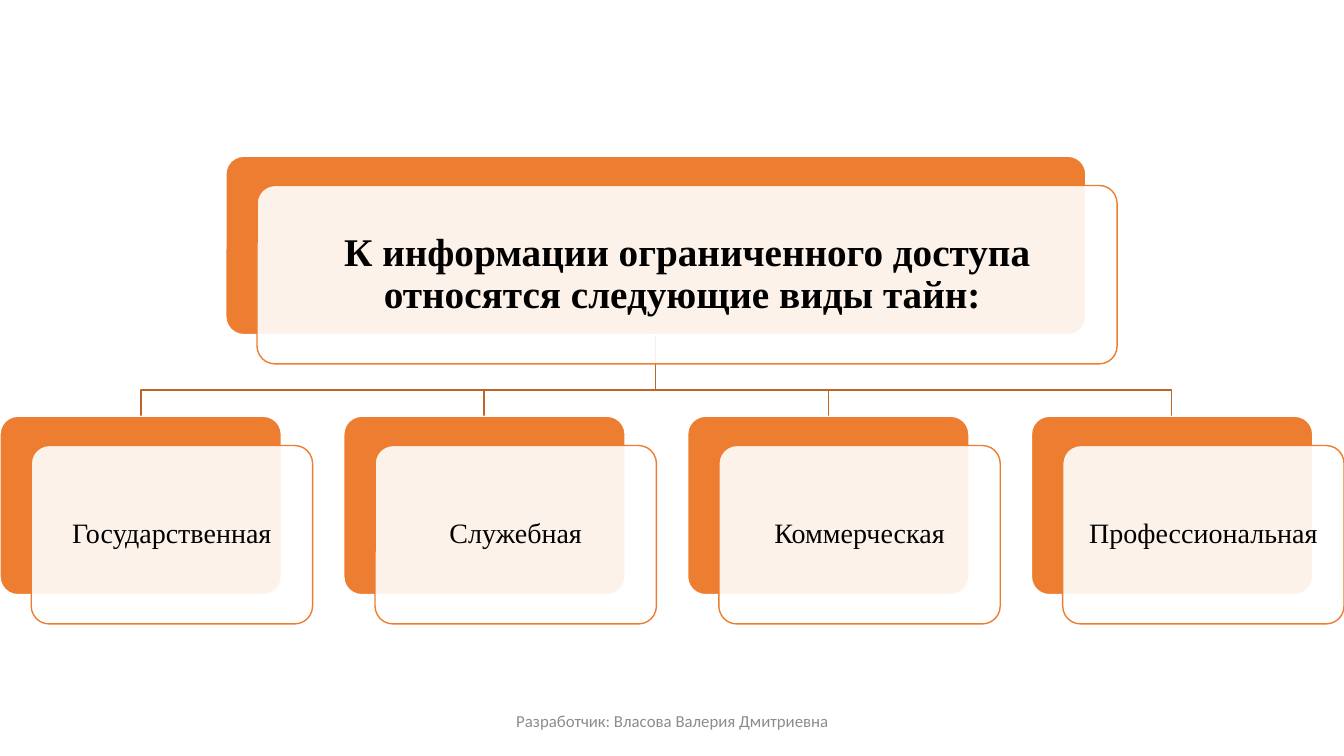
from dataclasses import dataclass

from lxml import etree
from pptx import Presentation
from pptx.dml.color import RGBColor
from pptx.enum.shapes import MSO_SHAPE
from pptx.enum.text import MSO_ANCHOR, PP_ALIGN
from pptx.oxml.ns import qn
from pptx.util import Emu, Pt

PX = 9144
ORANGE, BROWN, WHITE, BLACK, GRAY = "ED7D31", "BE6427", "FFFFFF", "000000", "8C8C8C"
OFFSET_X, OFFSET_Y = 31, 29
CARD_H, CARD_TOP, CARD_STEP = 177, 413, 341
BRANCH_Y = 387


@dataclass
class Card:
    """A labelled card, given by the corner and width of its back plate."""

    text: str
    x: int
    y: int
    w: int
    size: int = 20
    bold: bool = False
    inset: int = 8

    @property
    def mid(self) -> float:
        return self.x + self.w / 2


TITLE = Card("К информации ограниченного доступа относятся следующие виды тайн: ",
             224, 155, 853, size=28, bold=True, inset=12)
SECRETS = ["Государственная", "Служебная", "Коммерческая", "Профессиональная"]
CARDS = [Card(text, i * CARD_STEP, CARD_TOP, 279) for i, text in enumerate(SECRETS)]


def px(n: float) -> Emu:
    """Turn px into EMU."""
    return Emu(round(n * PX))


def rgb(color: str) -> RGBColor:
    """Turn a hex string into a colour."""
    return RGBColor.from_string(color)


def set_line(sp, color: str) -> None:
    """Give a shape a 1 pt outline and no shadow."""
    sp.line.color.rgb = rgb(color)
    sp.line.width = Pt(1)
    sp.shadow.inherit = False


def write(sp, text: str, *, size: int, font: str, color: str, bold: bool = False,
          inset: int = 10, spacing: float = 1.0) -> None:
    """Write one centred paragraph into a shape."""
    tf = sp.text_frame
    tf.word_wrap = True
    tf.vertical_anchor = MSO_ANCHOR.MIDDLE
    tf.margin_left = tf.margin_right = tf.margin_top = tf.margin_bottom = px(inset)
    p = tf.paragraphs[0]
    p.alignment = PP_ALIGN.CENTER
    p.line_spacing = spacing
    r = p.add_run()
    r.text = text
    r.font.size = Pt(size)
    r.font.name = font
    r.font.bold = bold
    r.font.color.rgb = rgb(color)


def add_plate(s, x: int, y: int, w: int, *, fill: str, line: str, alpha: int = 100):
    """Draw one rounded plate, with alpha as its opacity in percent."""
    sp = s.shapes.add_shape(MSO_SHAPE.ROUNDED_RECTANGLE, px(x), px(y), px(w), px(CARD_H))
    sp.adjustments[0] = 0.1
    sp.fill.solid()
    sp.fill.fore_color.rgb = rgb(fill)
    set_line(sp, line)
    if alpha < 100:
        clr = sp.fill._xPr.find(qn("a:solidFill"))[0]
        etree.SubElement(clr, qn("a:alpha")).set("val", str(alpha * 1000))
    return sp


def add_card(s, card: Card) -> None:
    """Draw a back plate and the shifted front plate with its text."""
    add_plate(s, card.x, card.y, card.w, fill=ORANGE, line=WHITE)
    sp = add_plate(s, card.x + OFFSET_X, card.y + OFFSET_Y, card.w,
                   fill=WHITE, line=ORANGE, alpha=90)
    write(sp, card.text, size=card.size, font="Times New Roman", color=BLACK,
          bold=card.bold, inset=card.inset, spacing=0.9)


def add_branch(s, parent: Card, child: Card) -> None:
    """Draw the bent line from a parent card down to a child card."""
    fb = s.shapes.build_freeform(parent.mid, parent.y + CARD_H, scale=PX)
    fb.add_line_segments([(parent.mid, BRANCH_Y), (child.mid, BRANCH_Y),
                          (child.mid, child.y)], close=False)
    sp = fb.convert_to_shape()
    sp.fill.background()
    set_line(sp, BROWN)


def main() -> None:
    """Build the slide and save it."""
    prs = Presentation()
    prs.slide_width, prs.slide_height = px(1333), px(750)
    s = prs.slides.add_slide(prs.slide_layouts[6])
    for card in reversed(CARDS):
        add_branch(s, TITLE, card)
    for card in [TITLE, *CARDS]:
        add_card(s, card)
    footer = s.shapes.add_textbox(px(442), px(695), px(450), px(40))
    write(footer, "Разработчик: Власова Валерия Дмитриевна",
          size=12, font="Calibri", color=GRAY, inset=5)
    prs.save("out.pptx")


if __name__ == "__main__":
    main()
